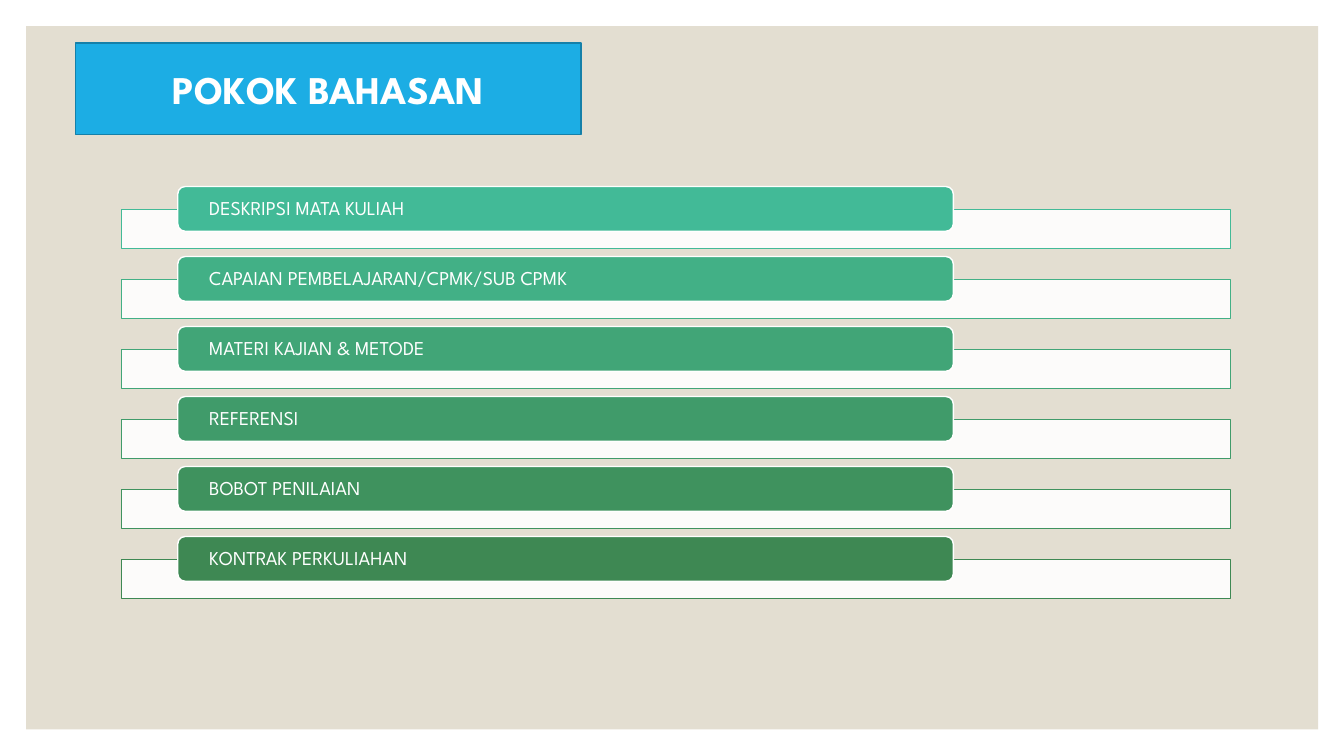
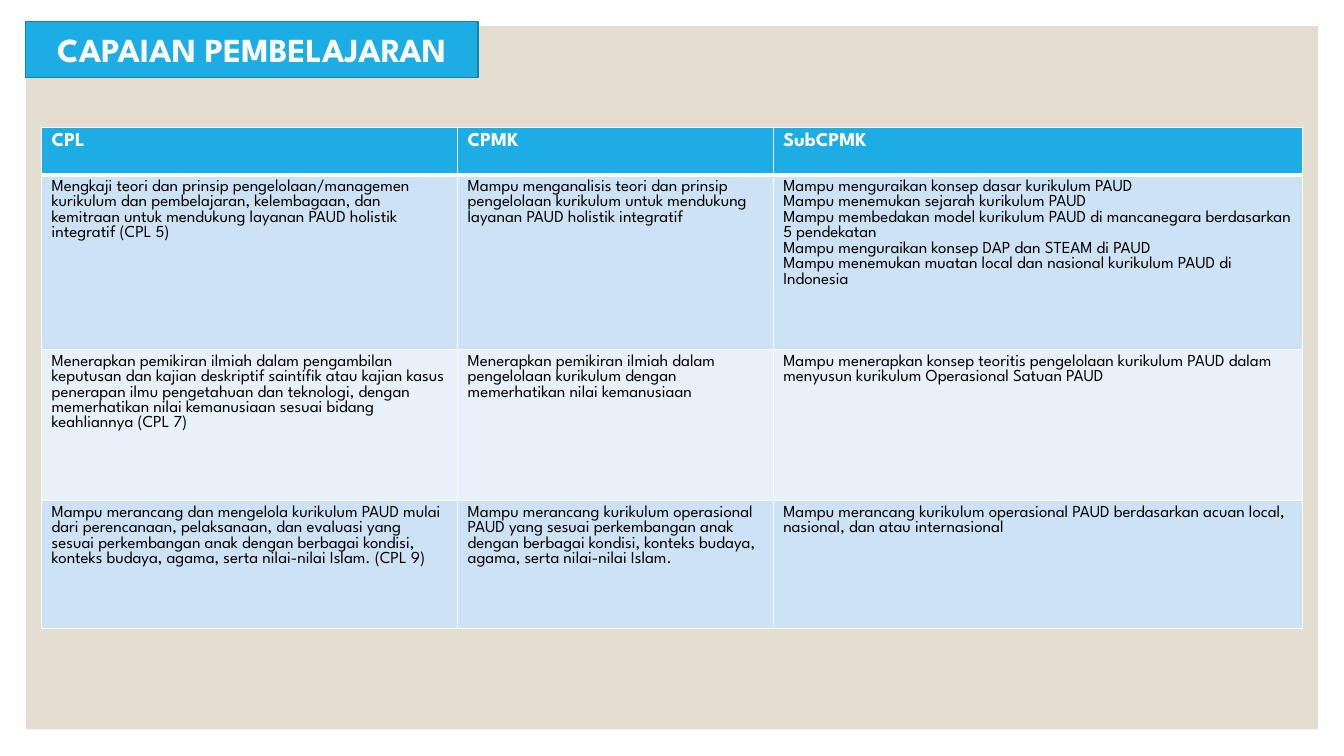
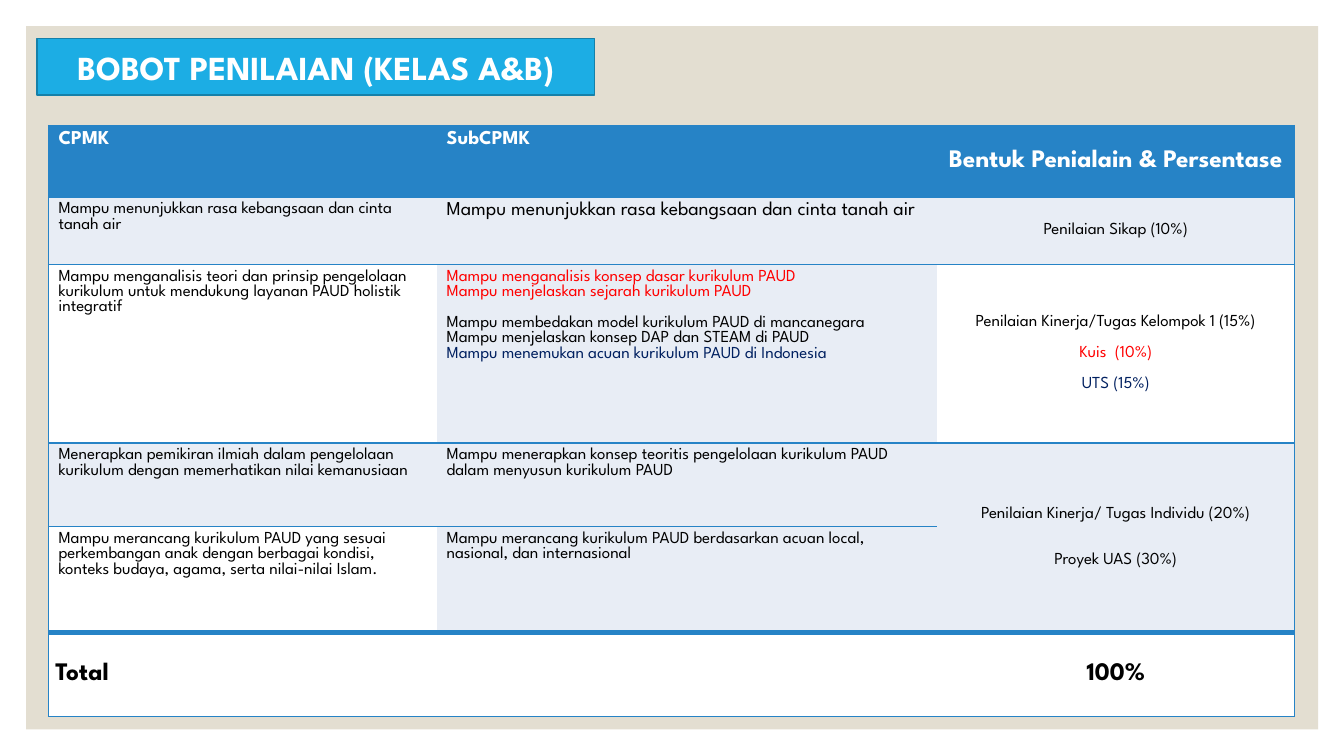
from dataclasses import dataclass

from lxml.etree import SubElement
from pptx import Presentation
from pptx.dml.color import RGBColor
from pptx.enum.shapes import MSO_SHAPE
from pptx.enum.text import MSO_ANCHOR, MSO_AUTO_SIZE, PP_ALIGN
from pptx.oxml.ns import qn
from pptx.util import Pt

FONT = "League Spartan"
COLORS = {
    "white": "FFFFFF",
    "black": "000000",
    "sand": "E3DED1",
    "sky": "1CADE4",
    "sky edge": "1580A9",
    "blue": "2683C6",
    "band dark": "CDE3F5",
    "band light": "E8F1FA",
    "tint": "E8EDF5",
    "red": "FF0000",
    "navy": "002060",
    "green 1": "42BA97",
    "green 2": "42B086",
    "green 3": "41A577",
    "green 4": "409B6A",
    "green 5": "3F925E",
    "green 6": "3E8853",
}


@dataclass
class Line:
    text: str
    size: int = 12
    color: str = "black"
    bold: bool = False
    gap: int = 0


def head(text, size=14):
    return [Line(text, size, "white", True)]


def body(*texts):
    return [Line(text) for text in texts]


class Lecture:
    def __init__(self):
        self.deck = Presentation()
        self.deck.slide_width, self.deck.slide_height = Pt(960), Pt(540)
        self.layout = self.deck.slide_layouts[5]
        self.page = None

    def add_page(self, title, at, size=24):
        self.page = self.deck.slides.add_slide(self.layout)
        if len(self.deck.slides) == 1:
            self.add_backdrop()
        box = self.page.shapes.title
        box.left, box.top, box.width, box.height = map(Pt, at)
        geometry = box.element.spPr.makeelement(qn("a:prstGeom"), {"prst": "snip1Rect"})
        SubElement(geometry, qn("a:avLst"))
        box.element.spPr.insert(1, geometry)
        self.paint(box, "sky", "sky edge")
        self.add_lines(box.text_frame, [Line(title, size, "white", True)], PP_ALIGN.CENTER)
        box.text_frame.auto_size = MSO_AUTO_SIZE.NONE
        box.text_frame.vertical_anchor = MSO_ANCHOR.MIDDLE

    def add_backdrop(self):
        backdrop = self.add_box(MSO_SHAPE.RECTANGLE, (18.72, 18.72, 922.8, 502.4), "sand")
        self.layout.shapes.element.insert(2, backdrop.element)

    def rgb(self, name):
        return RGBColor.from_string(COLORS[name])

    def paint(self, box, fill, line=None):
        box.fill.solid()
        box.fill.fore_color.rgb = self.rgb(fill)
        if line:
            box.line.color.rgb = self.rgb(line)
            box.line.width = Pt(1)
        else:
            box.line.fill.background()

    def add_box(self, kind, at, fill, line=None, opacity=100):
        box = self.page.shapes.add_shape(kind, *map(Pt, at))
        box.shadow.inherit = False
        self.paint(box, fill, line)
        if opacity < 100:
            color = box.element.spPr.find(qn("a:solidFill"))[0]
            SubElement(color, qn("a:alpha"), val=str(opacity * 1000))
        return box

    def add_lines(self, frame, lines, align=PP_ALIGN.LEFT):
        frame.word_wrap = True
        for index, line in enumerate(lines):
            para = frame.add_paragraph() if index else frame.paragraphs[0]
            para.alignment = align
            if line.gap:
                para.space_before = Pt(line.gap)
            span = para.add_run()
            span.text = line.text
            span.font.name = FONT
            span.font.size = Pt(line.size)
            span.font.bold = line.bold
            span.font.color.rgb = self.rgb(line.color)

    def add_topic(self, top, text, color):
        self.add_box(MSO_SHAPE.RECTANGLE, (87, top + 16.4, 792, 28), "white", color, 90)
        pill = self.add_box(MSO_SHAPE.ROUNDED_RECTANGLE, (127, top, 554, 32), color, "white")
        frame = pill.text_frame
        frame.margin_left = frame.margin_right = Pt(20.9)
        frame.margin_top = frame.margin_bottom = 0
        frame.vertical_anchor = MSO_ANCHOR.MIDDLE
        self.add_lines(frame, [Line(text, 14, "white")])
        frame.paragraphs[0].line_spacing = 0.9

    def add_grid(self, left, top, widths, heights, rows, fills):
        shape = self.page.shapes.add_table(
            len(rows), len(widths), Pt(left), Pt(top), Pt(sum(widths)), Pt(sum(heights)))
        table = shape.table
        for column, width in zip(table.columns, widths):
            column.width = Pt(width)
        for row, height in zip(table.rows, heights):
            row.height = Pt(height)
        for r, (texts, colors) in enumerate(zip(rows, fills)):
            for c, (lines, color) in enumerate(zip(texts, colors)):
                cell = table.cell(r, c)
                cell.fill.solid()
                cell.fill.fore_color.rgb = self.rgb(color)
                self.add_lines(cell.text_frame, lines)
        return table

    def center_cell(self, cell, align=PP_ALIGN.CENTER):
        cell.vertical_anchor = MSO_ANCHOR.MIDDLE
        cell.margin_left = cell.margin_right = Pt(5)
        cell.margin_top = cell.margin_bottom = 0
        for para in cell.text_frame.paragraphs:
            para.alignment = align

    def set_borders(self, cell, color, left, right, top, bottom):
        properties = cell._tc.get_or_add_tcPr()
        for index, (side, width) in enumerate(zip("LRTB", (left, right, top, bottom))):
            edge = properties.makeelement(qn(f"a:ln{side}"), {"w": str(int(Pt(width)))})
            if width:
                fill = SubElement(edge, qn("a:solidFill"))
                SubElement(fill, qn("a:srgbClr"), val=COLORS[color])
            else:
                SubElement(edge, qn("a:noFill"))
            properties.insert(index, edge)


def topics_page(lecture):
    lecture.add_page("POKOK BAHASAN", (54, 30.6, 361, 65.6), 28)
    topics = [
        "DESKRIPSI MATA KULIAH",
        "CAPAIAN PEMBELAJARAN/CPMK/SUB CPMK",
        "MATERI KAJIAN & METODE",
        "REFERENSI",
        "BOBOT PENILAIAN",
        "KONTRAK PERKULIAHAN",
    ]
    for index, topic in enumerate(topics):
        lecture.add_topic(133.2 + 50 * index, topic, f"green {index + 1}")


def outcomes_page(lecture):
    lecture.add_page("CAPAIAN PEMBELAJARAN", (18.2, 15.2, 323.2, 40.4))
    rows = [
        [head("CPL"), head("CPMK"), head("SubCPMK")],
        [
            body("Mengkaji teori dan prinsip pengelolaan/managemen kurikulum dan pembelajaran, "
                 "kelembagaan, dan kemitraan untuk mendukung layanan PAUD holistik integratif (CPL 5)"),
            body("Mampu menganalisis teori dan prinsip pengelolaan kurikulum untuk mendukung "
                 "layanan PAUD holistik integratif"),
            body("Mampu menguraikan konsep dasar kurikulum PAUD",
                 "Mampu menemukan sejarah kurikulum PAUD",
                 "Mampu membedakan model kurikulum PAUD di mancanegara berdasarkan 5 pendekatan",
                 "Mampu menguraikan konsep DAP dan STEAM di PAUD",
                 "Mampu menemukan muatan local dan nasional kurikulum PAUD di Indonesia"),
        ],
        [
            body("Menerapkan pemikiran ilmiah dalam pengambilan keputusan dan kajian deskriptif "
                 "saintifik atau kajian kasus penerapan ilmu pengetahuan dan teknologi, dengan "
                 "memerhatikan nilai kemanusiaan sesuai bidang keahliannya (CPL 7)"),
            body("Menerapkan pemikiran ilmiah dalam pengelolaan kurikulum dengan memerhatikan "
                 "nilai kemanusiaan"),
            body("Mampu menerapkan konsep teoritis pengelolaan kurikulum PAUD dalam menyusun "
                 "kurikulum Operasional Satuan PAUD"),
        ],
        [
            body("Mampu merancang dan mengelola kurikulum PAUD mulai dari perencanaan, pelaksanaan, "
                 "dan evaluasi yang sesuai perkembangan anak dengan berbagai kondisi, konteks budaya, "
                 "agama, serta nilai-nilai Islam. (CPL 9)"),
            body("Mampu merancang kurikulum operasional PAUD yang sesuai perkembangan anak dengan "
                 "berbagai kondisi, konteks budaya, agama, serta nilai-nilai Islam."),
            body("Mampu merancang kurikulum operasional PAUD berdasarkan acuan local, nasional, "
                 "dan atau internasional"),
        ],
    ]
    fills = [[color] * 3 for color in ("sky", "band dark", "band light", "band dark")]
    table = lecture.add_grid(29.7, 91, (297.2, 225.4, 378), (33.8, 124.8, 108, 91.2), rows, fills)
    for r in range(4):
        for c in range(3):
            lecture.set_borders(table.cell(r, c), "white", 1, 1, 3 if r == 1 else 1, 3 if r == 0 else 1)


def weights_page(lecture):
    lecture.add_page("BOBOT PENILAIAN (KELAS A&B)", (26.5, 27.4, 398.2, 40.4))
    attitude = "Mampu menunjukkan rasa kebangsaan dan cinta tanah air"
    rows = [
        [head("CPMK"), head("SubCPMK"), head("Bentuk Penialain & Persentase", 18)],
        [body(attitude), [Line(attitude, 14)], body("Penilaian Sikap (10%)")],
        [
            body("Mampu menganalisis teori dan prinsip pengelolaan kurikulum untuk mendukung "
                 "layanan PAUD holistik integratif"),
            [
                Line("Mampu menganalisis konsep dasar kurikulum PAUD", color="red"),
                Line("Mampu menjelaskan sejarah kurikulum PAUD", color="red"),
                Line("Mampu membedakan model kurikulum PAUD di mancanegara", gap=11),
                Line("Mampu menjelaskan konsep DAP dan STEAM di PAUD"),
                Line("Mampu menemukan acuan kurikulum PAUD di Indonesia", color="navy"),
            ],
            [
                Line("Penilaian Kinerja/Tugas Kelompok 1 (15%)"),
                Line("Kuis  (10%)", color="red", gap=11),
                Line("UTS (15%)", color="navy", gap=11),
            ],
        ],
        [
            body("Menerapkan pemikiran ilmiah dalam pengelolaan kurikulum dengan memerhatikan "
                 "nilai kemanusiaan"),
            body("Mampu menerapkan konsep teoritis pengelolaan kurikulum PAUD dalam menyusun "
                 "kurikulum PAUD"),
            [Line("Penilaian Kinerja/ Tugas Individu (20%)"), Line("Proyek UAS (30%)", gap=22)],
        ],
        [
            body("Mampu merancang kurikulum PAUD yang sesuai perkembangan anak dengan berbagai "
                 "kondisi, konteks budaya, agama, serta nilai-nilai Islam."),
            body("Mampu merancang kurikulum PAUD berdasarkan acuan local, nasional, dan internasional"),
            [],
        ],
        [[Line("Total", 18, bold=True)], [], [Line("100%", 18, bold=True)]],
    ]
    fills = [
        ["blue"] * 3,
        ["tint"] * 3,
        ["white", "tint", "white"],
        ["tint"] * 3,
        ["white", "tint", "tint"],
        ["white"] * 3,
    ]
    table = lecture.add_grid(
        34.6, 89.6, (277.2, 357.8, 254.8), (51.2, 48, 127.6, 59.6, 76, 60), rows, fills)
    table.cell(3, 2).merge(table.cell(4, 2))
    for r in range(6):
        for c in range(3):
            cell = table.cell(r, c)
            if cell.is_spanned:
                continue
            last = r + (cell.span_height if cell.is_merge_origin else 1) - 1
            lecture.set_borders(
                cell, "blue", int(c == 0), int(c == 2), 4 if r == 5 else 1, 4 if last == 4 else 1)
            if c == 2:
                lecture.center_cell(cell)
    lecture.center_cell(table.cell(5, 0), PP_ALIGN.LEFT)


def main():
    lecture = Lecture()
    topics_page(lecture)
    outcomes_page(lecture)
    weights_page(lecture)
    lecture.deck.save("out.pptx")


if __name__ == "__main__":
    main()
